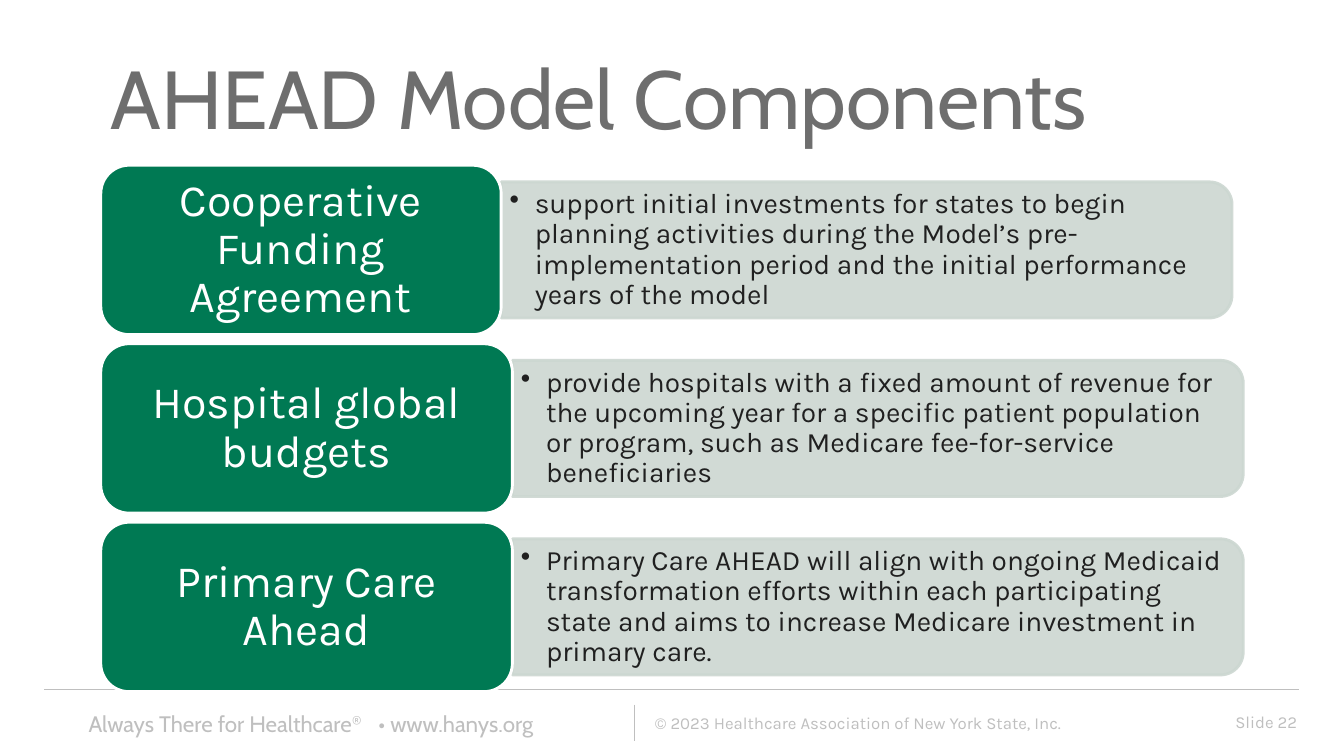
from lxml import etree
from pptx import Presentation
from pptx.dml.color import RGBColor
from pptx.enum.shapes import MSO_CONNECTOR, MSO_SHAPE
from pptx.enum.text import MSO_ANCHOR as ANCHOR, PP_ALIGN as ALIGN
from pptx.oxml.ns import qn
from pptx.util import Pt

GREEN = RGBColor(0x00, 0x79, 0x53)
SAGE = RGBColor(0xCC, 0xD7, 0xD1)
WHITE = RGBColor(0xFF, 0xFF, 0xFF)
INK = RGBColor(0x20, 0x20, 0x20)
TITLE_GREY = RGBColor(0x6E, 0x6E, 0x6E)
FOOTER_GREY = RGBColor(0xBF, 0xBF, 0xBF)

LABEL_LEFT, LABEL_HEIGHT = 72, 121
FIRST_TOP, ROW_PITCH = 118, 127.5
PANEL_WIDTH, PANEL_HEIGHT = 522, 97.2
PANEL_TEXT_WIDTH, PANEL_TEXT_HEIGHT = 517.7, 87.2
OUTLINE = 2.08

COMPONENTS = [
    ("Cooperative Funding Agreement", 286,
     "support initial investments for states to begin planning activities during "
     "the Model’s pre-implementation period and the initial performance years of "
     "the model"),
    ("Hospital global budgets", 294,
     "provide hospitals with a fixed amount of revenue for the upcoming year for a "
     "specific patient population or program, such as Medicare fee-for-service "
     "beneficiaries"),
    ("Primary Care Ahead", 294,
     "Primary Care AHEAD will align with ongoing Medicaid transformation efforts "
     "within each participating state and aims to increase Medicare investment in "
     "primary care."),
]


class SlideBuilder:
    def __init__(self, slide):
        self.slide = slide
        self.styles = {
            "title": {"name": "Cabin", "size": Pt(58.7), "color": TITLE_GREY},
            "label": {"name": "Karla", "size": Pt(32), "color": WHITE},
            "detail": {"name": "Karla", "size": Pt(20), "color": INK},
            "slogan": {"name": "Cabin", "size": Pt(16), "color": FOOTER_GREY},
            "footer": {"name": "Karla", "size": Pt(12), "color": FOOTER_GREY},
        }

    def fill_text(self, shape, runs, style, anchor=ANCHOR.TOP, insets=(7.2, 3.6),
                  align=ALIGN.LEFT, spacing=None, bullet=False, tab=None):
        """Runs are (text, superscript) pairs of one paragraph."""
        frame = shape.text_frame
        across, down = map(Pt, insets)
        frame_format = {"word_wrap": True, "vertical_anchor": anchor,
                        "margin_left": across, "margin_right": across,
                        "margin_top": down, "margin_bottom": down}
        for name, value in frame_format.items():
            setattr(frame, name, value)
        paragraph = frame.paragraphs[0]
        paragraph.alignment = align
        if spacing:
            paragraph.line_spacing = spacing
        properties = paragraph._p.get_or_add_pPr()
        if bullet:
            properties.set("marL", str(Pt(18)))
            properties.set("indent", str(Pt(-18)))
            etree.SubElement(properties, qn("a:buChar")).set("char", "•")
        if tab:
            tabs = etree.SubElement(properties, qn("a:tabLst"))
            stop = etree.SubElement(tabs, qn("a:tab"))
            stop.set("pos", str(Pt(tab)))
            stop.set("algn", "l")
        for text, superscript in runs:
            run = paragraph.add_run()
            run.text = text
            for name, value in self.styles[style].items():
                if name == "color":
                    run.font.color.rgb = value
                else:
                    setattr(run.font, name, value)
            if superscript:
                run._r.get_or_add_rPr().set("baseline", "30000")

    def text(self, left, top, width, height, runs, style, **layout):
        box = self.slide.shapes.add_textbox(Pt(left), Pt(top), Pt(width), Pt(height))
        self.fill_text(box, runs, style, **layout)

    def block(self, kind, left, top, width, height, fill, line, alpha=None):
        shape = self.slide.shapes.add_shape(
            kind, Pt(left), Pt(top), Pt(width), Pt(height))
        shape.shadow.inherit = False
        shape.fill.solid()
        shape.fill.fore_color.rgb = fill
        shape.line.color.rgb = line
        shape.line.width = Pt(OUTLINE)
        if alpha:
            for color in shape._element.spPr.iter(qn("a:srgbClr")):
                etree.SubElement(color, qn("a:alpha")).set("val", str(alpha * 1000))
        return shape

    def rule(self, x1, y1, x2, y2):
        line = self.slide.shapes.add_connector(
            MSO_CONNECTOR.STRAIGHT, Pt(x1), Pt(y1), Pt(x2), Pt(y2))
        line.line.color.rgb = FOOTER_GREY
        line.line.width = Pt(0.5)
        etree.SubElement(line._element.spPr, qn("a:effectLst"))

    def component(self, top, name, label_width, detail):
        middle = top + LABEL_HEIGHT / 2
        label_right = LABEL_LEFT + label_width
        # The panel is an upright shape turned a quarter to round its right side
        panel = self.block(
            MSO_SHAPE.ROUND_2_SAME_RECTANGLE,
            label_right + (PANEL_WIDTH - PANEL_HEIGHT) / 2, middle - PANEL_WIDTH / 2,
            PANEL_HEIGHT, PANEL_WIDTH, SAGE, SAGE, alpha=90)
        panel.rotation = 90
        self.text(label_right, middle - PANEL_TEXT_HEIGHT / 2, PANEL_TEXT_WIDTH,
                  PANEL_TEXT_HEIGHT, [(detail, False)], "detail",
                  anchor=ANCHOR.MIDDLE, insets=(6, 3), spacing=0.9, bullet=True)
        label = self.block(MSO_SHAPE.ROUNDED_RECTANGLE, LABEL_LEFT, top,
                           label_width, LABEL_HEIGHT, GREEN, WHITE)
        self.fill_text(label, [(name, False)], "label", anchor=ANCHOR.MIDDLE,
                       insets=(9.2, 4.9), align=ALIGN.CENTER, spacing=0.9)


def main():
    presentation = Presentation()
    presentation.slide_width, presentation.slide_height = Pt(960), Pt(540)
    builder = SlideBuilder(presentation.slides.add_slide(presentation.slide_layouts[6]))

    # Footer
    builder.rule(453, 503.3, 453, 529.2)
    builder.rule(31.7, 492.5, 928, 492.5)
    builder.text(56.2, 503.3, 390.2, 26.6,
                 [("Always There for Healthcare", False), ("®", True),
                  ("\t• www.hanys.org", False)],
                 "slogan", anchor=ANCHOR.MIDDLE, tab=207)
    builder.text(871.9, 501.1, 64.1, 28.8, [("Slide 22", False)], "footer",
                 anchor=ANCHOR.MIDDLE, insets=(9.4, 5), align=ALIGN.RIGHT)
    builder.text(460.8, 505.4, 304.6, 21.6,
                 [("© 2023 Healthcare Association of New York State, Inc.", False)],
                 "footer")

    # Title
    builder.text(72, 30.2, 816, 81.4, [("AHEAD Model Components", False)], "title")

    # Model components
    for row, (name, label_width, detail) in enumerate(COMPONENTS):
        builder.component(FIRST_TOP + row * ROW_PITCH, name, label_width, detail)

    presentation.save("out.pptx")


if __name__ == "__main__":
    main()
